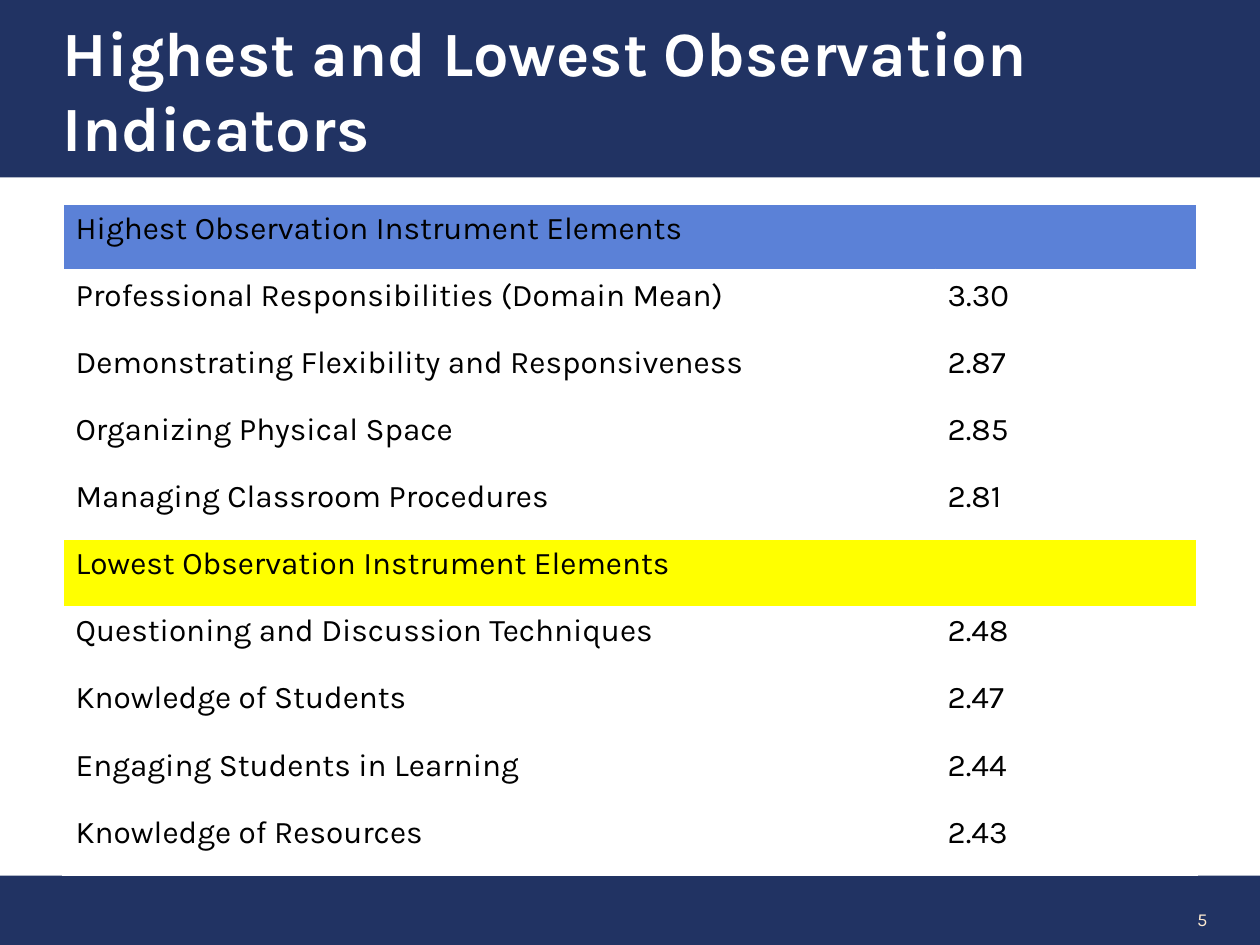
from lxml import etree
from pptx import Presentation
from pptx.dml.color import RGBColor
from pptx.enum.shapes import MSO_SHAPE
from pptx.enum.text import MSO_ANCHOR, PP_ALIGN
from pptx.oxml.ns import qn
from pptx.util import Cm, Pt

NAVY, WHITE, BLACK, CREAM = "213363", "FFFFFF", "000000", "FEEBD0"
SLIDE_WIDTH, SLIDE_HEIGHT = 25.4, 19.05

# Each group: heading, heading colour, indicators with their scores
GROUPS = [
    ("Highest Observation Instrument Elements", "5B81D7", [
        ("Professional Responsibilities (Domain Mean)", "3.30"),
        ("Demonstrating Flexibility and Responsiveness", "2.87"),
        ("Organizing Physical Space", "2.85"),
        ("Managing Classroom Procedures", "2.81"),
    ]),
    ("Lowest Observation Instrument Elements", "FFFF00", [
        ("Questioning and Discussion Techniques", "2.48"),
        ("Knowledge of Students", "2.47"),
        ("Engaging Students in Learning", "2.44"),
        ("Knowledge of Resources", "2.43"),
    ]),
]


def colour(hex_value):
    return RGBColor.from_string(hex_value)


def add_run(paragraph, text, size, hex_value, bold=False):
    run = paragraph.add_run()
    run.text = text
    run.font.name = "Karla"
    run.font.size = Pt(size)
    run.font.bold = bold
    run.font.color.rgb = colour(hex_value)


def add_band(slide, left, top, width, height):
    band = slide.shapes.add_shape(
        MSO_SHAPE.RECTANGLE, Cm(left), Cm(top), Cm(width), Cm(height))
    band.shadow.inherit = False
    band.fill.solid()
    band.fill.fore_color.rgb = colour(NAVY)
    band.line.fill.background()
    return band


def add_title(slide, left, top, width, height):
    frame = add_band(slide, left, top, width, height).text_frame
    frame.word_wrap = True
    frame.vertical_anchor = MSO_ANCHOR.MIDDLE
    frame.margin_left = Cm(1.27)
    heading = frame.paragraphs[0]
    heading.alignment = PP_ALIGN.LEFT
    add_run(heading, "Highest and Lowest Observation Indicators", 36, WHITE, True)


def add_footer(slide, left, top, width, height):
    add_band(slide, left, top, width, height)
    # Slide number, near the right end of the band
    number_box = slide.shapes.add_textbox(
        Cm(left + width - 4.52), Cm(top + 0.36), Cm(3.71), Cm(1.02))
    frame = number_box.text_frame
    frame.word_wrap = True
    frame.vertical_anchor = MSO_ANCHOR.MIDDLE
    frame.paragraphs[0].alignment = PP_ALIGN.RIGHT
    add_run(frame.paragraphs[0], "5", 10.5, CREAM)


def set_borders(cell, bottom_width):
    properties = cell._tc.get_or_add_tcPr()
    for side, points in (("L", 1), ("R", 1), ("T", 1), ("B", bottom_width)):
        line = etree.SubElement(properties, qn(f"a:ln{side}"), w=str(Pt(points)))
        fill = etree.SubElement(line, qn("a:solidFill"))
        etree.SubElement(fill, qn("a:srgbClr"), val=WHITE)


def add_indicator_table(slide, left, top, width, height):
    rows = []
    for heading, heading_fill, indicators in GROUPS:
        rows.append((heading, "", heading_fill))
        rows += [(name, score, None) for name, score in indicators]

    table = slide.shapes.add_table(
        len(rows), 2, Cm(left), Cm(top), Cm(width), Cm(height)).table
    table.first_row = table.horz_banding = False
    score_width = 5.28
    table.columns[0].width = Cm(width - score_width)
    table.columns[1].width = Cm(score_width)

    for index, (label, score, row_fill) in enumerate(rows):
        table.rows[index].height = Cm(height / len(rows))
        for column, text in enumerate((label, score)):
            cell = table.cell(index, column)
            set_borders(cell, 3 if index == 0 else 1)
            if row_fill:
                cell.fill.solid()
                cell.fill.fore_color.rgb = colour(row_fill)
            else:
                cell.fill.background()
            if text:
                add_run(cell.text_frame.paragraphs[0], text, 18, BLACK)
        # Group headings run across both columns
        if row_fill:
            table.cell(index, 0).merge(table.cell(index, 1))


def main():
    deck = Presentation()
    deck.slide_width, deck.slide_height = Cm(SLIDE_WIDTH), Cm(SLIDE_HEIGHT)
    slide = deck.slides.add_slide(deck.slide_layouts[6])
    add_footer(slide, 0, 17.65, SLIDE_WIDTH, SLIDE_HEIGHT - 17.65)
    add_title(slide, 0, 0, SLIDE_WIDTH, 3.58)
    add_indicator_table(slide, 1.27, 4.11, 22.86, 13.54)
    deck.save("out.pptx")


if __name__ == "__main__":
    main()
